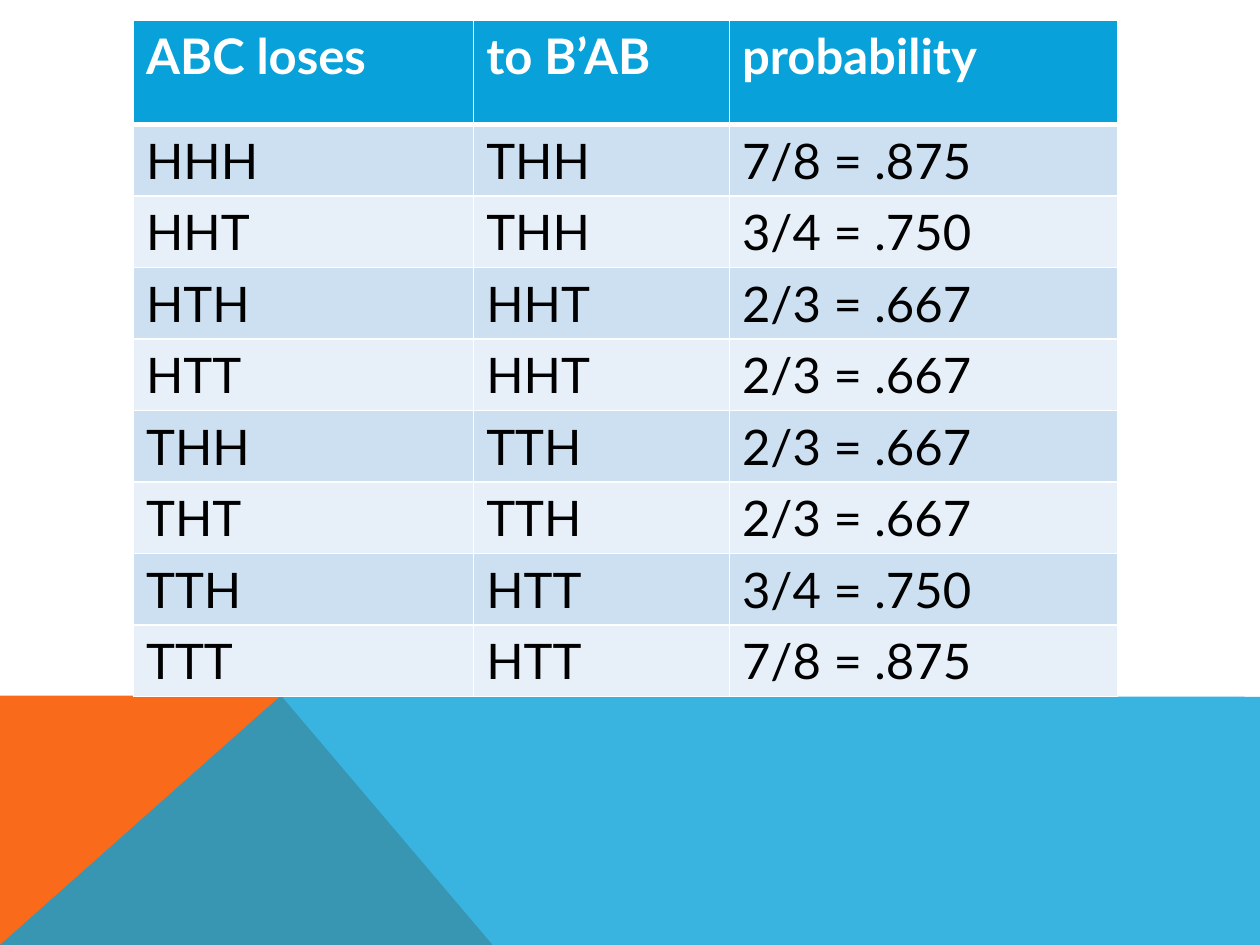
from lxml.etree import SubElement
from pptx import Presentation
from pptx.dml.color import RGBColor
from pptx.oxml.ns import qn
from pptx.util import Inches, Pt

WHITE = RGBColor(0xFF, 0xFF, 0xFF)
BLACK = RGBColor(0x00, 0x00, 0x00)
BLUE = RGBColor(0x08, 0xA1, 0xD9)
ORANGE = RGBColor(0xF9, 0x6A, 0x1B)
BANDS = (RGBColor(0xE7, 0xF0, 0xF8), RGBColor(0xCC, 0xE0, 0xF1))

COLUMN_WIDTHS = (2.7, 2.03, 3.08)
HEADER_HEIGHT, ROW_HEIGHT = 0.83, 0.53
ROWS = (
    ("ABC loses", "to B’AB", "probability"),
    ("HHH", "THH", "7/8 = .875"),
    ("HHT", "THH", "3/4 = .750"),
    ("HTH", "HHT", "2/3 = .667"),
    ("HTT", "HHT", "2/3 = .667"),
    ("THH", "TTH", "2/3 = .667"),
    ("THT", "TTH", "2/3 = .667"),
    ("TTH", "HTT", "3/4 = .750"),
    ("TTT", "HTT", "7/8 = .875"),
)


def add_polygon(slide, points, color, opacity=100):
    """Draw a filled outline through points given in inches."""
    corners = [(Inches(x), Inches(y)) for x, y in points]
    builder = slide.shapes.build_freeform(*corners[0])
    builder.add_line_segments(corners[1:], close=True)
    shape = builder.convert_to_shape()
    shape.shadow.inherit = False
    shape.fill.solid()
    shape.fill.fore_color.rgb = color
    shape.line.fill.background()
    if opacity < 100:
        color_element = shape.fill._xPr.find(qn("a:solidFill"))[0]
        SubElement(color_element, qn("a:alpha"), val=str(opacity * 1000))


def add_footer(slide, left, top, width, height):
    """Place the two overlapping coloured areas in the given box."""
    right, bottom = left + width, top + height
    peak = (left + 2.23, top)
    add_polygon(slide, [(left, bottom), (left, top), peak, (left + 3.91, bottom)], ORANGE)
    add_polygon(slide, [(left, bottom), peak, (right, top + 0.01), (right, bottom)], BLUE, 80)


def set_borders(cell, bottom_width):
    """Give a cell white borders with its own bottom width."""
    properties = cell._tc.get_or_add_tcPr()
    for side, width in (("L", 1), ("R", 1), ("T", 1), ("B", bottom_width)):
        line = SubElement(properties, qn(f"a:ln{side}"), w=str(Pt(width)))
        fill = SubElement(line, qn("a:solidFill"))
        SubElement(fill, qn("a:srgbClr"), val=str(WHITE))


def format_cell(cell, text, row_index):
    """Write and style one header or body cell."""
    is_header = row_index == 0
    set_borders(cell, 3 if is_header else 1)
    cell.fill.solid()
    cell.fill.fore_color.rgb = BLUE if is_header else BANDS[row_index % 2]
    cell.text_frame.text = text
    font = cell.text_frame.paragraphs[0].runs[0].font
    font.name = "Lato"
    font.size = Pt(28)
    font.bold = is_header
    font.color.rgb = WHITE if is_header else BLACK


def add_probability_table(slide, left, top, width, height):
    """Place the table of sequences and probabilities."""
    frame = slide.shapes.add_table(
        len(ROWS), len(COLUMN_WIDTHS),
        Inches(left), Inches(top), Inches(width), Inches(height),
    )
    table = frame.table
    for column, column_width in zip(table.columns, COLUMN_WIDTHS):
        column.width = Inches(column_width)
    for row_index, texts in enumerate(ROWS):
        row = table.rows[row_index]
        row.height = Inches(ROW_HEIGHT if row_index else HEADER_HEIGHT)
        for cell, text in zip(row.cells, texts):
            format_cell(cell, text, row_index)


def main():
    """Build and save the slide."""
    presentation = Presentation()
    presentation.slide_width = Inches(10)
    presentation.slide_height = Inches(7.5)
    slide = presentation.slides.add_slide(presentation.slide_layouts[6])
    add_footer(slide, 0, 5.52, 10, 1.98)
    add_probability_table(slide, 1.06, 0.16, sum(COLUMN_WIDTHS), 5.37)
    presentation.save("out.pptx")


if __name__ == "__main__":
    main()
